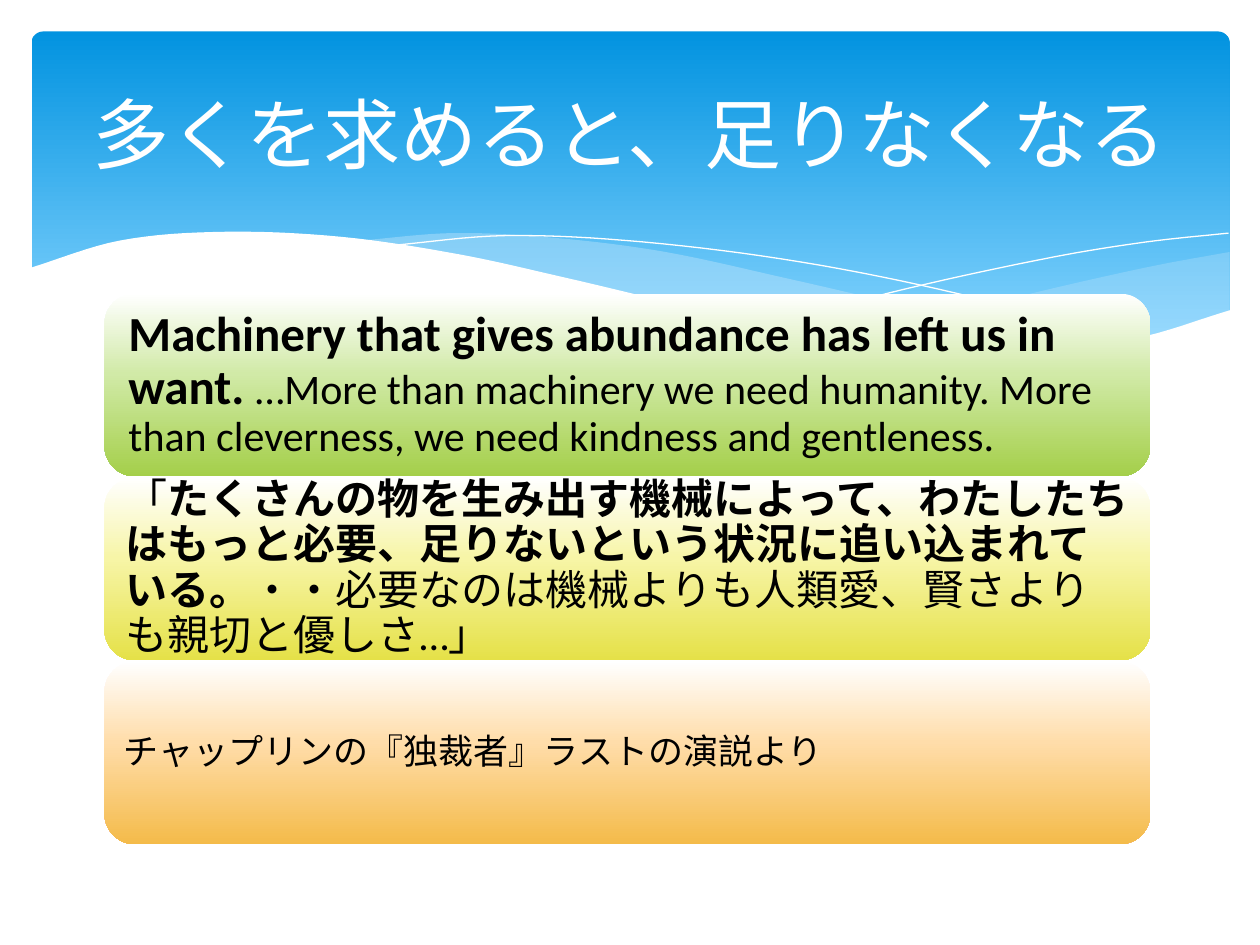
from copy import deepcopy

from pptx import Presentation
from pptx.dml.color import RGBColor
from pptx.enum.shapes import MSO_SHAPE as SHAPE
from pptx.enum.text import MSO_ANCHOR as ANCHOR, PP_ALIGN as ALIGN
from pptx.oxml.ns import qn
from pptx.oxml.xmlchemy import OxmlElement
from pptx.util import Inches, Pt

WHITE = RGBColor(0xFF, 0xFF, 0xFF)
BLACK = RGBColor(0x00, 0x00, 0x00)
BLUE = RGBColor(0x02, 0x93, 0xE0)
SKY = RGBColor(0x83, 0xD3, 0xFE)
MIST = RGBColor(0xC6, 0xE7, 0xFC)
GREEN, PALE_GREEN = RGBColor(0xA4, 0xCF, 0x4A), RGBColor(0xD1, 0xEA, 0xA7)
YELLOW, PALE_YELLOW = RGBColor(0xE5, 0xE1, 0x48), RGBColor(0xF7, 0xF5, 0xA7)
ORANGE, PALE_ORANGE = RGBColor(0xF4, 0xBB, 0x4A), RGBColor(0xFF, 0xDD, 0xAA)

# Stacked panels, in inches
PANEL_LEFT, PANEL_TOP, PANEL_WIDTH, PANEL_HEIGHT = 0.83, 2.33, 8.3, 1.45
PANEL_STEP = 1.46
TEXT_PAD = 0.07


def smooth(knots, steps=8):
    """Points of a smooth curve y(x) through the knots (cubic Hermite)."""
    last = len(knots) - 1

    def slope(i):
        (x0, y0), (x1, y1) = knots[max(i - 1, 0)], knots[min(i + 1, last)]
        return (y1 - y0) / (x1 - x0)

    points = [knots[0]]
    for i in range(last):
        (x0, y0), (x1, y1) = knots[i], knots[i + 1]
        width = x1 - x0
        for k in range(1, steps + 1):
            t = k / steps
            rise = t * t * (3 - 2 * t)
            bend = t * (1 - t) * width * ((1 - t) * slope(i) - t * slope(i + 1))
            points.append((x0 + t * width, y0 + rise * (y1 - y0) + bend))
    return points


def band(upper, lower):
    """Closed outline between two smooth edges, both given left to right."""
    return smooth(upper) + smooth(lower)[::-1]


class Deck:
    font = "Calibri"

    def __init__(self, prs):
        self.s = prs.slides.add_slide(prs.slide_layouts[6])

    def panel(self, x, y, w, h, stops, corner=0.1667):
        """Rounded rectangle with a top-to-bottom gradient of (position, colour)."""
        sp = self.s.shapes.add_shape(
            SHAPE.ROUNDED_RECTANGLE, Inches(x), Inches(y), Inches(w), Inches(h))
        sp.adjustments[0] = corner
        sp.shadow.inherit = False
        sp.line.fill.background()
        sp.fill.gradient()
        sp.fill.gradient_angle = 270
        stop_list = sp._element.spPr.find(qn("a:gradFill")).find(qn("a:gsLst"))
        for _ in stops[2:]:
            stop_list.append(deepcopy(stop_list[0]))
        for stop, (position, color) in zip(sp.fill.gradient_stops, stops):
            stop.position = position
            stop.color.rgb = color

    def outline(self, points, close):
        start, *rest = [(Inches(x), Inches(y)) for x, y in points]
        builder = self.s.shapes.build_freeform(*start, scale=1.0)
        builder.add_line_segments(rest, close=close)
        sp = builder.convert_to_shape()
        sp.shadow.inherit = False
        return sp

    def wave(self, points, color, opacity=100):
        sp = self.outline(points, close=True)
        sp.line.fill.background()
        sp.fill.solid()
        sp.fill.fore_color.rgb = color
        if opacity < 100:
            alpha = OxmlElement("a:alpha")
            alpha.set("val", str(opacity * 1000))
            sp._element.spPr.find(qn("a:solidFill"))[0].append(alpha)

    def curve(self, knots):
        sp = self.outline(smooth(knots), close=False)
        sp.fill.background()
        sp.line.color.rgb = WHITE
        sp.line.width = Pt(0)

    def text(self, x, y, w, h, runs, color, inset, align=ALIGN.LEFT, spacing=1.0):
        """One paragraph of (text, size, bold) runs."""
        box = self.s.shapes.add_textbox(Inches(x), Inches(y), Inches(w), Inches(h))
        tf = box.text_frame
        tf.word_wrap = True
        tf.vertical_anchor = ANCHOR.MIDDLE
        tf.margin_left = tf.margin_right = Inches(inset)
        tf.margin_top = tf.margin_bottom = Inches(inset)
        p = tf.paragraphs[0]
        p.alignment = align
        p.line_spacing = spacing
        p.font.name = self.font
        p.font.color.rgb = color
        for words, size, bold in runs:
            r = p.add_run()
            r.text = words
            r.font.size = Pt(size)
            r.font.bold = bold
            r.font.name = self.font
            r.font.color.rgb = color
            east_asian = OxmlElement("a:ea")
            east_asian.set("typeface", self.font)
            r._r.get_or_add_rPr().append(east_asian)


def draw_header(deck):
    deck.panel(0.25, 0.25, 9.51, 2.7, [(0, BLUE), (0.9, SKY)], corner=0.034)

    # Translucent waves
    right_crest = [(6.61, 2.65), (7.53, 2.48), (8.61, 2.23), (9.21, 2.1), (9.76, 2)]
    right_trough = [(6.61, 2.65), (7.32, 2.74), (8.14, 2.78), (8.89, 2.72), (9.76, 2.47)]
    deck.wave(band(right_crest, right_trough), MIST, 29)
    middle_crest = [(2.86, 1.91), (3.61, 1.85), (4.42, 1.89), (5.28, 2),
                    (6.29, 2.22), (7.41, 2.47), (8.93, 2.73)]
    middle_trough = [(2.86, 1.91), (3.62, 2.03), (4.49, 2.22), (5.66, 2.48),
                     (6.8, 2.68), (8.07, 2.78), (8.93, 2.73)]
    deck.wave(band(middle_crest, middle_trough), MIST, 40)

    # Crossing hairlines
    deck.curve([(3.09, 1.95), (4.01, 1.87), (5.1, 1.92), (6.36, 2.08),
                (7.6, 2.33), (9.07, 2.72)])
    deck.curve([(6.13, 2.57), (7.2, 2.29), (8.36, 2.04), (9.1, 1.92), (9.75, 1.85)])

    # White wave that cuts the header's lower edge
    front_crest = [(0.23, 2.13), (0.95, 1.91), (1.77, 1.84), (2.71, 1.88),
                   (3.65, 2.02), (4.47, 2.2), (5.55, 2.45), (6.68, 2.65),
                   (8.09, 2.77), (8.99, 2.69), (9.77, 2.46)]
    deck.wave(band(front_crest, [(0.23, 3.29), (9.77, 3.29)]), WHITE)


def draw_quotes(deck):
    quotes = [
        (PALE_GREEN, GREEN, 0.12, [
            ("Machinery that gives abundance has left us in want. ", 28, True),
            ("…More than machinery we need humanity. More than cleverness, "
             "we need kindness and gentleness.", 24, False)]),
        (PALE_YELLOW, YELLOW, 0.1, [
            ("「", 24, False),
            ("たくさんの物を生み出す機械によって、わたしたちはもっと必要、"
             "足りないという状況に追い込まれている。", 24, True),
            ("・・必要なのは機械よりも人類愛、賢さよりも親切と優しさ…」", 24, False)]),
        (PALE_ORANGE, ORANGE, 0.08, [
            ("チャップリンの『独裁者』ラストの演説より", 20, False)]),
    ]
    for i, (pale, strong, inset, runs) in enumerate(quotes):
        top = PANEL_TOP + i * PANEL_STEP
        deck.panel(PANEL_LEFT, top, PANEL_WIDTH, PANEL_HEIGHT,
                   [(0, WHITE), (0.44, pale), (1, strong)])
        deck.text(PANEL_LEFT + TEXT_PAD, top + TEXT_PAD,
                  PANEL_WIDTH - 2 * TEXT_PAD, PANEL_HEIGHT - 2 * TEXT_PAD,
                  runs, BLACK, inset, spacing=0.9)


def main():
    prs = Presentation()
    prs.slide_width, prs.slide_height = Inches(10), Inches(7.5)
    deck = Deck(prs)
    draw_header(deck)
    draw_quotes(deck)
    # Title
    deck.text(0.5, 0.37, 9, 1.37, [("多くを求めると、足りなくなる", 44, False)],
              WHITE, 0.05, align=ALIGN.CENTER)
    prs.save("out.pptx")


if __name__ == "__main__":
    main()
